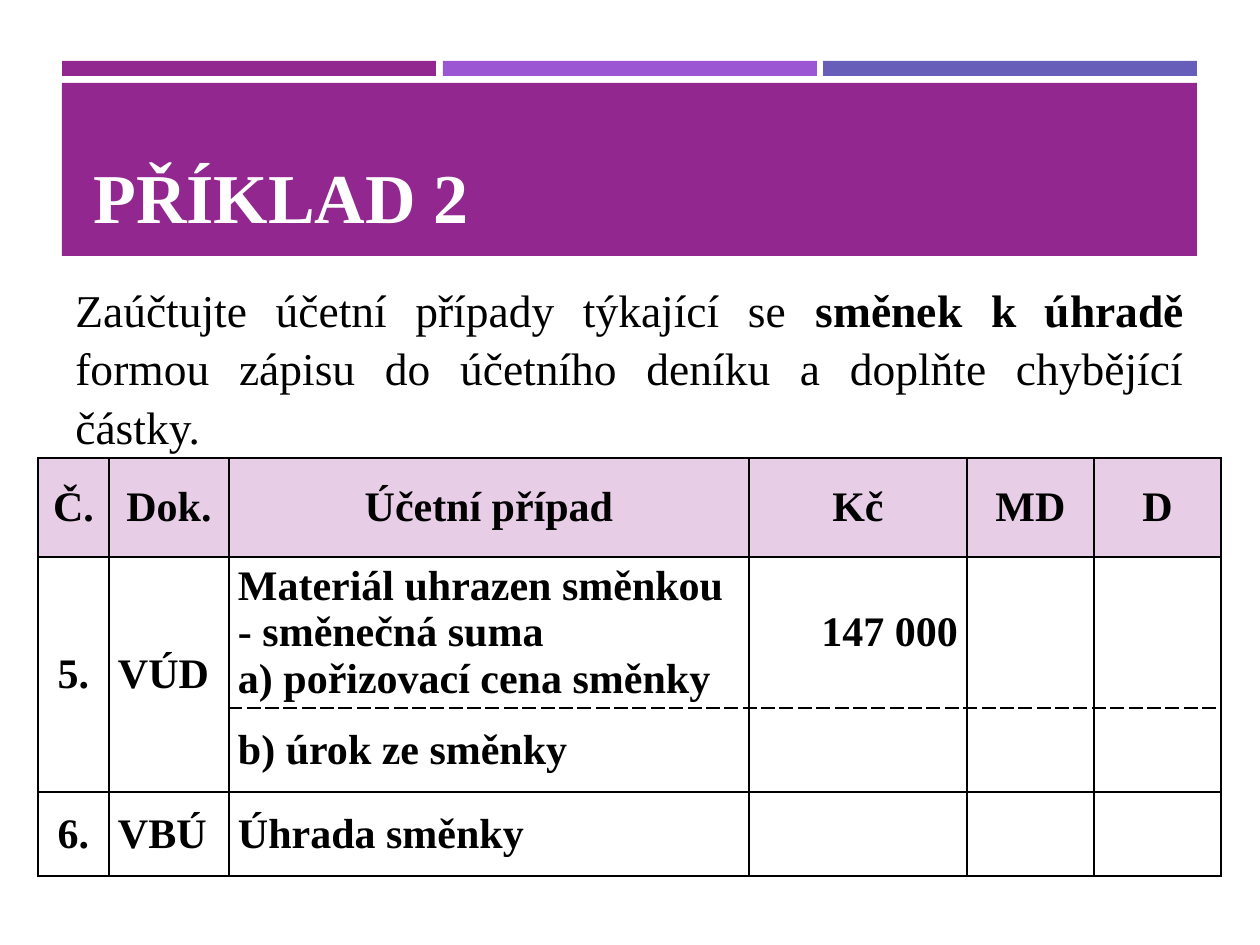
"""Build the slide with example 2 on bills of exchange payable."""
from dataclasses import dataclass
from typing import Any

from lxml import etree
from pptx import Presentation
from pptx.dml.color import RGBColor
from pptx.enum.shapes import MSO_SHAPE
from pptx.enum.text import MSO_ANCHOR, PP_ALIGN
from pptx.oxml.ns import qn
from pptx.util import Emu, Pt

RECTANGLE = MSO_SHAPE.RECTANGLE
TOP, MIDDLE, BOTTOM = MSO_ANCHOR.TOP, MSO_ANCHOR.MIDDLE, MSO_ANCHOR.BOTTOM
LEFT, CENTER, RIGHT, JUSTIFY = PP_ALIGN.LEFT, PP_ALIGN.CENTER, PP_ALIGN.RIGHT, PP_ALIGN.JUSTIFY
PX_PER_INCH = 126


@dataclass(frozen=True)
class Theme:
    """Colours, font and type sizes of the slide."""
    plum: str = "92278F"
    violet: str = "9B57D3"
    indigo: str = "665EB8"
    header: str = "E8CDE7"
    ink: str = "000000"
    paper: str = "FFFFFF"
    font: str = "Times New Roman"
    title_size: int = 40
    task_size: int = 26
    entry_size: int = 24
    border_width: int = 1


@dataclass(frozen=True)
class Box:
    """Place of an element in px."""
    left: int
    top: int
    width: int
    height: int


@dataclass(frozen=True)
class Band:
    """Coloured bar of the heading."""
    box: Box
    color: str


@dataclass(frozen=True)
class Run:
    """Piece of text with one weight."""
    text: str
    bold: bool = True


THEME = Theme()
BANDS = [
    Band(Box(62, 61, 374, 15), THEME.plum),
    Band(Box(443, 61, 374, 15), THEME.violet),
    Band(Box(823, 61, 374, 15), THEME.indigo),
    Band(Box(62, 83, 1135, 173), THEME.plum),
]
TASK = [
    Run("Zaúčtujte účetní případy týkající se ", False),
    Run("směnek k úhradě "),
    Run("formou zápisu do účetního deníku a doplňte chybějící částky.", False),
]
COLUMN_WIDTHS = [71, 120, 520, 218, 127, 127]
ROW_HEIGHTS = [99, 151, 84, 84]
ENTRY_ALIGNS = [CENTER, LEFT, LEFT, RIGHT, CENTER, CENTER]
JOURNAL = [
    ["Č.", "Dok.", "Účetní případ", "Kč", "MD", "D"],
    ["5.", "VÚD", "Materiál uhrazen směnkou - směnečná suma\na) pořizovací cena směnky",
     "147 000", "", ""],
    ["", "", "b) úrok ze směnky", "", "", ""],
    ["6.", "VBÚ", "Úhrada směnky", "", "", ""],
]
MERGED_COLUMNS = 2
SPLIT_EDGES = {1: "lnB", 2: "lnT"}


def px(length: int) -> Emu:
    """Turn px into EMU."""
    return Emu(round(length * 914400 / PX_PER_INCH))


def place(box: Box) -> list[Emu]:
    """Give the four lengths of a box in EMU."""
    return [px(length) for length in (box.left, box.top, box.width, box.height)]


def apply_formats(target: Any, formats: dict[str, Any]) -> None:
    """Set each named attribute on the target."""
    for attribute, value in formats.items():
        setattr(target, attribute, value)


def write_run(paragraph: Any, run: Run, size: int, color: str) -> None:
    """Add one formatted run to a paragraph."""
    words = paragraph.add_run()
    words.text = run.text
    apply_formats(words.font, {"name": THEME.font, "size": Pt(size), "bold": run.bold})
    words.font.color.rgb = RGBColor.from_string(color)


def draw_band(slide: Any, band: Band) -> None:
    """Draw a plain coloured bar."""
    bar = slide.shapes.add_shape(RECTANGLE, *place(band.box))
    bar.shadow.inherit = False
    bar.fill.solid()
    bar.fill.fore_color.rgb = RGBColor.from_string(band.color)
    bar.line.fill.background()


def draw_text(slide: Any, box: Box, runs: list[Run], size: int, color: str,
              anchor: MSO_ANCHOR, formats: dict[str, Any]) -> None:
    """Draw a wrapped text box with one paragraph."""
    frame = slide.shapes.add_textbox(*place(box)).text_frame
    apply_formats(frame, {"word_wrap": True, "vertical_anchor": anchor})
    paragraph = frame.paragraphs[0]
    apply_formats(paragraph, formats)
    for run in runs:
        write_run(paragraph, run, size, color)


def border_cell(cell: Any, dashed_edge: str | None) -> None:
    """Rule all four edges of a cell, one of them dashed if named."""
    properties = cell._tc.get_or_add_tcPr()
    for edge in ("lnL", "lnR", "lnT", "lnB"):
        line = etree.SubElement(properties, qn(f"a:{edge}"), w=str(Pt(THEME.border_width)))
        fill = etree.SubElement(line, qn("a:solidFill"))
        etree.SubElement(fill, qn("a:srgbClr"), val=THEME.ink)
        dash = "dash" if edge == dashed_edge else "solid"
        etree.SubElement(line, qn("a:prstDash"), val=dash)


def fill_cell(cell: Any, text: str, align: PP_ALIGN, color: str | None) -> None:
    """Write the lines of a cell and colour its ground."""
    apply_formats(cell, {"vertical_anchor": MIDDLE, "margin_left": px(9),
                         "margin_right": px(9), "margin_top": 0, "margin_bottom": 0})
    if color:
        cell.fill.solid()
        cell.fill.fore_color.rgb = RGBColor.from_string(color)
    else:
        cell.fill.background()
    for index, line in enumerate(text.splitlines()):
        frame = cell.text_frame
        paragraph = frame.add_paragraph() if index else frame.paragraphs[0]
        paragraph.alignment = align
        write_run(paragraph, Run(line), THEME.entry_size, THEME.ink)


def draw_journal(slide: Any, left: int, top: int) -> None:
    """Draw the journal table with its merged and split rows."""
    box = Box(left, top, sum(COLUMN_WIDTHS), sum(ROW_HEIGHTS))
    journal = slide.shapes.add_table(len(ROW_HEIGHTS), len(COLUMN_WIDTHS), *place(box)).table
    apply_formats(journal, {"first_row": False, "horz_banding": False})
    for column, width in zip(journal.columns, COLUMN_WIDTHS):
        column.width = px(width)
    for row, height in zip(journal.rows, ROW_HEIGHTS):
        row.height = px(height)
    for column in range(MERGED_COLUMNS):
        journal.cell(1, column).merge(journal.cell(2, column))
    for row, entries in enumerate(JOURNAL):
        for column, text in enumerate(entries):
            cell = journal.cell(row, column)
            border_cell(cell, SPLIT_EDGES.get(row) if column >= MERGED_COLUMNS else None)
            align = ENTRY_ALIGNS[column] if row else CENTER
            fill_cell(cell, text, align, None if row else THEME.header)


def main() -> None:
    """Build and save the presentation."""
    presentation = Presentation()
    apply_formats(presentation, {"slide_width": px(1260), "slide_height": px(945)})
    slide = presentation.slides.add_slide(presentation.slide_layouts[6])
    for band in BANDS:
        draw_band(slide, band)
    draw_text(slide, Box(81, 95, 1101, 149), [Run("PŘÍKLAD 2")], THEME.title_size,
              THEME.paper, BOTTOM, {"alignment": LEFT})
    draw_text(slide, Box(63, 271, 1134, 178), TASK, THEME.task_size,
              THEME.ink, TOP, {"alignment": JUSTIFY, "line_spacing": 1.08})
    draw_journal(slide, 38, 458)
    presentation.save("out.pptx")


if __name__ == "__main__":
    main()
